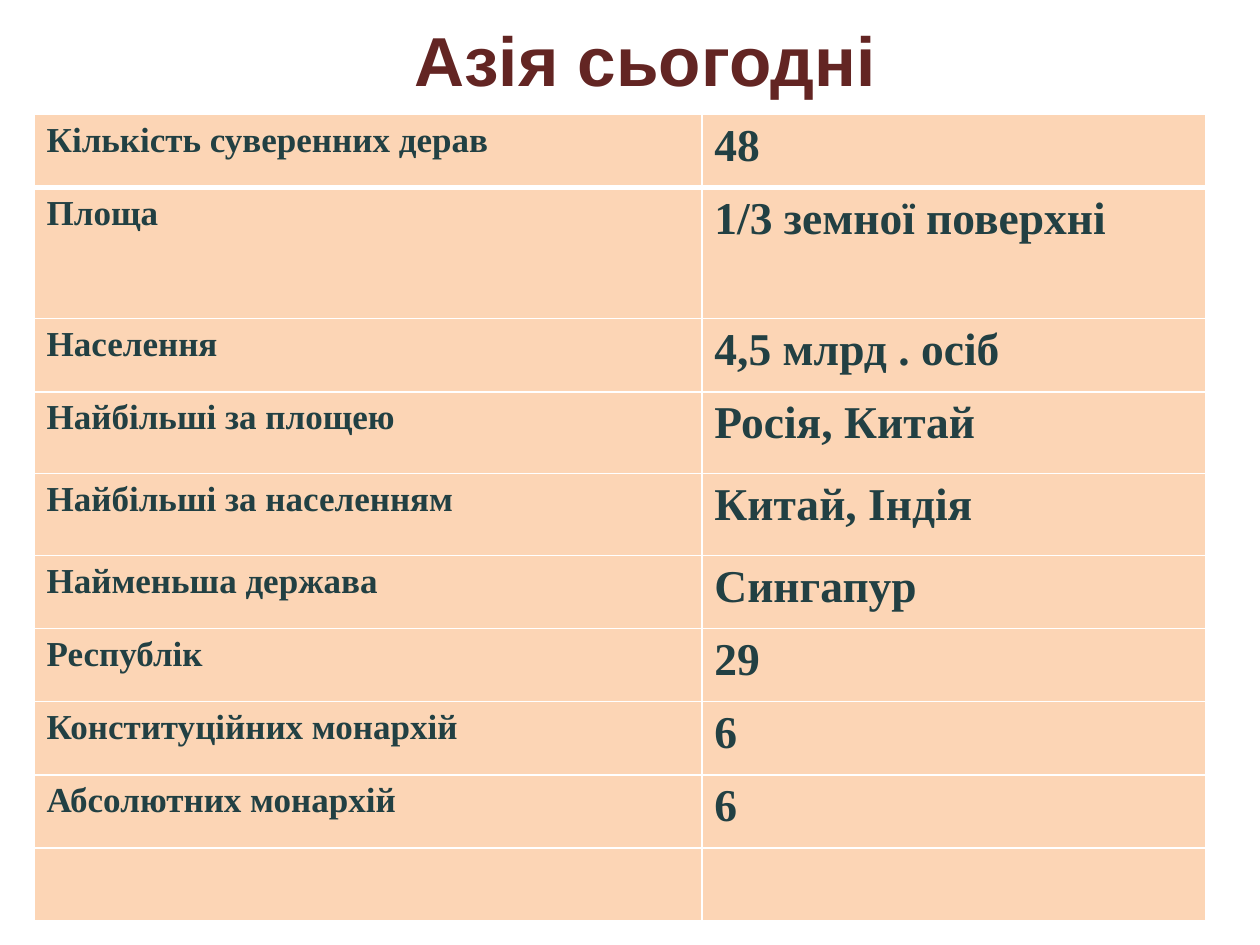
import pptx
import pptx.dml.color
import pptx.enum.text
import pptx.oxml
import pptx.oxml.ns
import pptx.util
from dataclasses import dataclass

Inches = pptx.util.Inches

# Content
TITLE = "Азія сьогодні"
FACTS = [
    ("Кількість суверенних дерав", "48"),
    ("Площа", "1/3 земної поверхні"),
    ("Населення", "4,5 млрд . осіб"),
    ("Найбільші за площею", "Росія, Китай"),
    ("Найбільші за населенням", "Китай, Індія"),
    ("Найменьша держава", "Сингапур"),
    ("Республік", "29"),
    ("Конституційних монархій", "6"),
    ("Абсолютних монархій", "6"),
    ("", ""),
]


@dataclass(frozen=True)
class Theme:
    title_font: str = "Arial"
    table_font: str = "Times New Roman"
    title_color: str = "632523"
    text_color: str = "224043"
    cell_color: str = "FCD5B5"
    border_color: str = "FFFFFF"
    title_size: float = 39.6
    column_sizes: tuple = (20, 26)
    border: int = 1
    first_row_border: int = 3


THEME = Theme()

# Grid, in inches
COLUMN_WIDTHS = (5.3, 4)
ROW_HEIGHT = 0.58
TALLER_ROWS = {1: 1.04, 3: 0.65, 4: 0.65}
ROW_HEIGHTS = [TALLER_ROWS.get(row, ROW_HEIGHT) for row in range(len(FACTS))]


def color(value):
    return pptx.dml.color.RGBColor.from_string(value)


def format_runs(paragraph, font_name, size, text_color):
    for run in paragraph.runs:
        run.font.name = font_name
        run.font.size = pptx.util.Pt(size)
        run.font.bold = True
        run.font.color.rgb = color(text_color)


def set_borders(cell, widths):
    """Border lines come before the fill in the cell properties."""
    properties = cell._tc.get_or_add_tcPr()
    for position, (side, width) in enumerate(widths.items()):
        line = pptx.oxml.parse_xml(
            f'<a:ln{side} {pptx.oxml.ns.nsdecls("a")} w="{pptx.util.Pt(width)}">'
            f'<a:solidFill><a:srgbClr val="{THEME.border_color}"/></a:solidFill>'
            f'</a:ln{side}>'
        )
        properties.insert(position, line)


def add_title(slide):
    title = slide.shapes.title
    title.left, title.top = Inches(0.62), Inches(0.16)
    title.width, title.height = Inches(9), Inches(0.61)
    title.text_frame.text = TITLE
    title.text_frame.vertical_anchor = pptx.enum.text.MSO_ANCHOR.MIDDLE
    paragraph = title.text_frame.paragraphs[0]
    paragraph.alignment = pptx.enum.text.PP_ALIGN.CENTER
    format_runs(paragraph, THEME.title_font, THEME.title_size, THEME.title_color)


def add_facts_table(slide):
    table = slide.shapes.add_table(
        len(FACTS), len(COLUMN_WIDTHS), Inches(0.27), Inches(0.91),
        Inches(sum(COLUMN_WIDTHS)), Inches(sum(ROW_HEIGHTS)),
    ).table
    table.horz_banding = False
    for column, width in zip(table.columns, COLUMN_WIDTHS):
        column.width = Inches(width)
    for row, height in zip(table.rows, ROW_HEIGHTS):
        row.height = Inches(height)

    for row_index, fact in enumerate(FACTS):
        # A thicker line parts the first row from the rest
        top = THEME.first_row_border if row_index == 1 else THEME.border
        bottom = THEME.first_row_border if row_index == 0 else THEME.border
        borders = {"L": THEME.border, "R": THEME.border, "T": top, "B": bottom}
        for column_index, text in enumerate(fact):
            cell = table.cell(row_index, column_index)
            cell.fill.solid()
            cell.fill.fore_color.rgb = color(THEME.cell_color)
            set_borders(cell, borders)
            cell.text_frame.text = text
            format_runs(cell.text_frame.paragraphs[0], THEME.table_font,
                        THEME.column_sizes[column_index], THEME.text_color)


def main():
    presentation = pptx.Presentation()
    presentation.slide_width = Inches(10)
    presentation.slide_height = Inches(7.5)
    slide = presentation.slides.add_slide(
        presentation.slide_layouts.get_by_name("Title Only"))
    add_title(slide)
    add_facts_table(slide)
    presentation.save("out.pptx")


if __name__ == "__main__":
    main()
